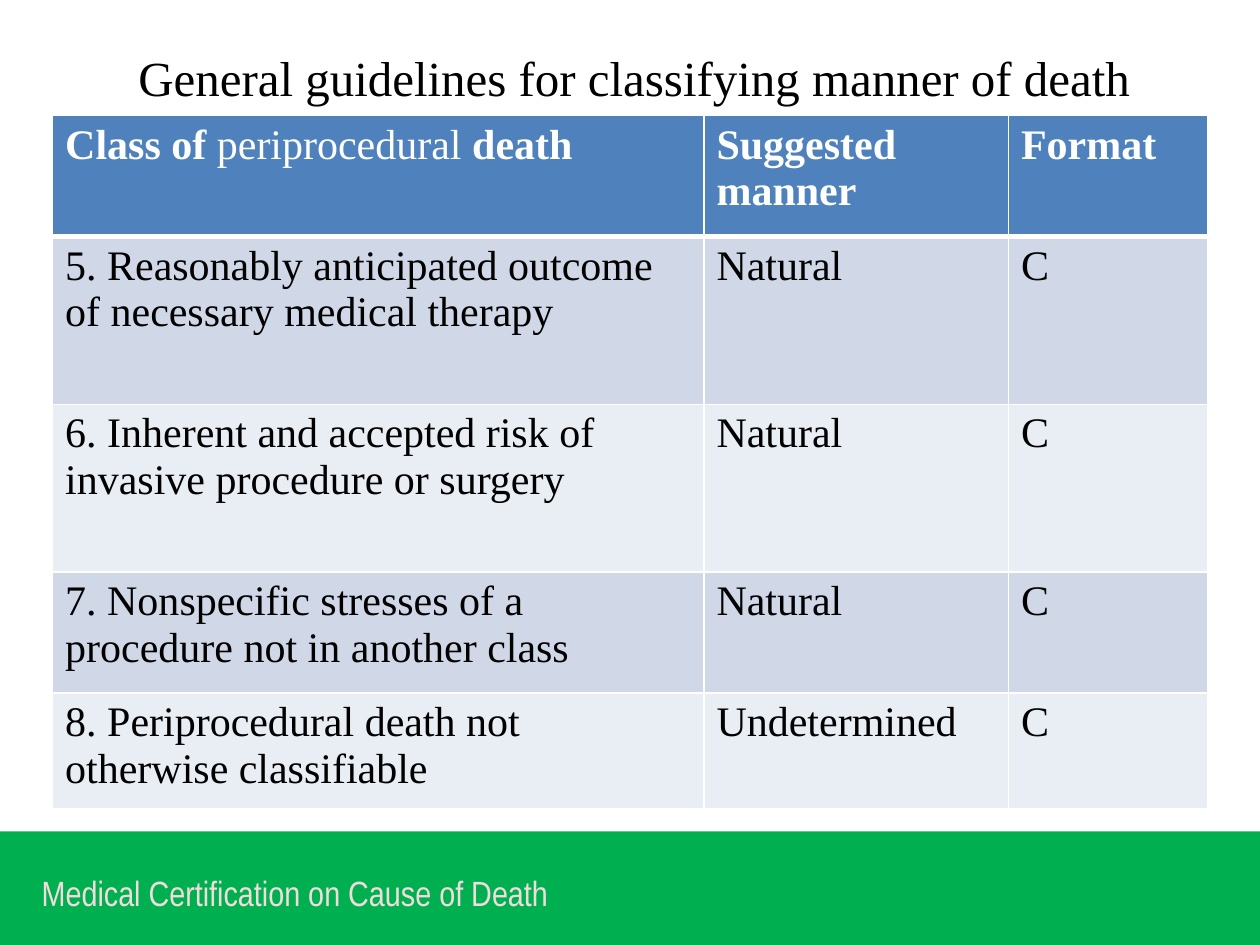
from dataclasses import dataclass

from lxml import etree
from pptx import Presentation
from pptx import util as u
from pptx.dml.color import RGBColor
from pptx.enum import shapes, text
from pptx.oxml.ns import qn


@dataclass(frozen=True)
class Theme:
    serif: str = "Times New Roman"
    narrow: str = "Arial Narrow"
    white: str = "FFFFFF"
    black: str = "000000"
    green: str = "00B050"
    pink: str = "F2DCDB"
    head: str = "4F81BD"
    bands: tuple = ("D0D8E8", "E9EDF4")
    title: int = 28
    body: int = 24
    foot: int = 20
    thin: int = 1
    thick: int = 3


class Deck:
    def __init__(self, theme):
        self.theme = theme
        self.prs = Presentation()
        self.prs.slide_width, self.prs.slide_height = u.Cm(25.4), u.Cm(19.05)
        self.slide = self.prs.slides.add_slide(self.prs.slide_layouts[6])

    def paint(self, item, color):
        item.fill.solid()
        item.fill.fore_color.rgb = RGBColor.from_string(color)

    def run(self, para, words, size, color, font, bold=False):
        run = para.add_run()
        run.text = words
        run.font.size, run.font.name, run.font.bold = u.Pt(size), font, bold
        run.font.color.rgb = RGBColor.from_string(color)

    def band(self, *box, color):
        bar = self.slide.shapes.add_shape(
            shapes.MSO_SHAPE.RECTANGLE, *map(u.Cm, box))
        bar.shadow.inherit = False
        self.paint(bar, color)
        bar.line.fill.background()

    def label(self, *box, words, size, color, font, inset):
        frame = self.slide.shapes.add_textbox(*map(u.Cm, box)).text_frame
        frame.word_wrap = True
        frame.vertical_anchor = text.MSO_ANCHOR.MIDDLE
        frame.margin_left = frame.margin_right = u.Cm(inset)
        frame.margin_top = frame.margin_bottom = 0
        self.run(frame.paragraphs[0], words, size, color, font)

    def edge(self, cell, base):
        """Put white lines round a cell, the lower one as thick as base."""
        props = cell._tc.get_or_add_tcPr()
        for spot, side in enumerate("LRTB"):
            width = base if side == "B" else self.theme.thin
            line = etree.Element(qn(f"a:ln{side}"), w=str(u.Pt(width)))
            fill = etree.SubElement(line, qn("a:solidFill"))
            etree.SubElement(fill, qn("a:srgbClr"), val=self.theme.white)
            props.insert(spot, line)

    def table(self, left, top, cols, highs, rows):
        t = self.theme
        grid = self.slide.shapes.add_table(
            len(rows), len(cols), u.Cm(left), u.Cm(top),
            u.Cm(sum(cols)), u.Cm(sum(highs))).table
        for col, width in zip(grid.columns, cols):
            col.width = u.Cm(width)
        for i, (row, high) in enumerate(zip(rows, highs)):
            grid.rows[i].height = u.Cm(high)
            for j, runs in enumerate(row):
                cell = grid.cell(i, j)
                self.paint(cell, t.bands[(i - 1) % 2] if i else t.head)
                self.edge(cell, t.thin if i else t.thick)
                para = cell.text_frame.paragraphs[0]
                for words, bold in runs:
                    self.run(para, words, t.body,
                             t.black if i else t.white, t.serif, bold)


def main():
    t = Theme()
    deck = Deck(t)

    # Footer
    deck.band(0, 16.76, 25.4, 2.34, color=t.green)
    deck.label(0.84, 17.4, 13.13, 1.2, size=t.foot, color=t.pink,
               font=t.narrow, inset=0,
               words="Medical Certification on Cause of Death")

    # Title
    deck.label(2.54, 0.76, 21.59, 1.57, size=t.title, color=t.black,
               font=t.serif, inset=0.25,
               words="General guidelines for classifying manner of death")

    # Table of classes
    head = [[("Class of ", True), ("periprocedural", False), (" death", True)],
            [("Suggested manner", True)], [("Format", True)]]
    classes = [
        ("5. Reasonably anticipated outcome of necessary medical therapy",
         "Natural"),
        ("6. Inherent and accepted risk of invasive procedure or surgery",
         "Natural"),
        ("7. Nonspecific stresses of a procedure not in another class",
         "Natural"),
        ("8. Periprocedural death not otherwise classifiable",
         "Undetermined"),
    ]
    body = [[[(words, False)] for words in (*row, "C")] for row in classes]
    deck.table(1.06, 2.33, (13.13, 6.14, 4.02),
               (2.44, 3.38, 3.38, 2.44, 2.33), [head] + body)

    deck.prs.save("out.pptx")


if __name__ == "__main__":
    main()
